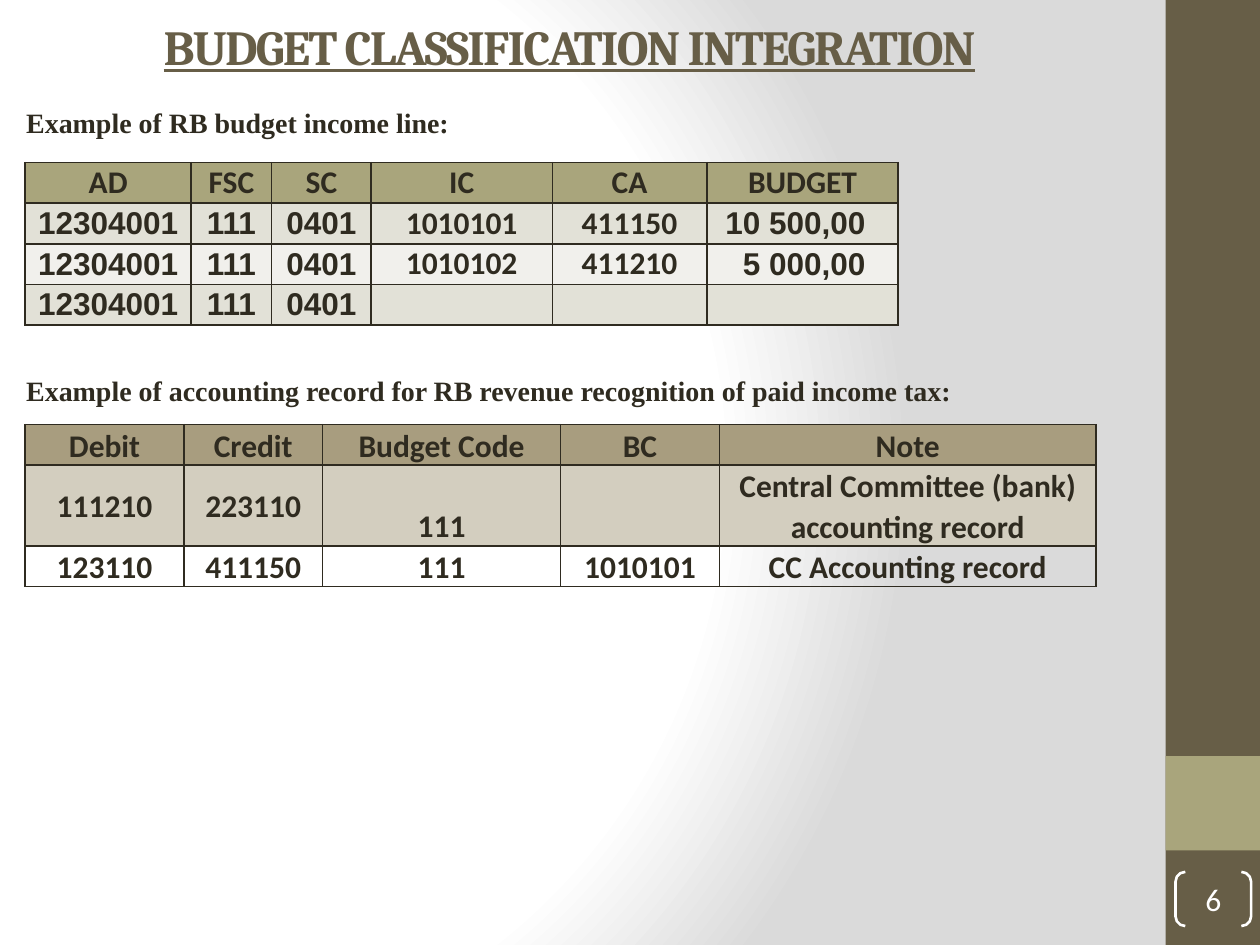
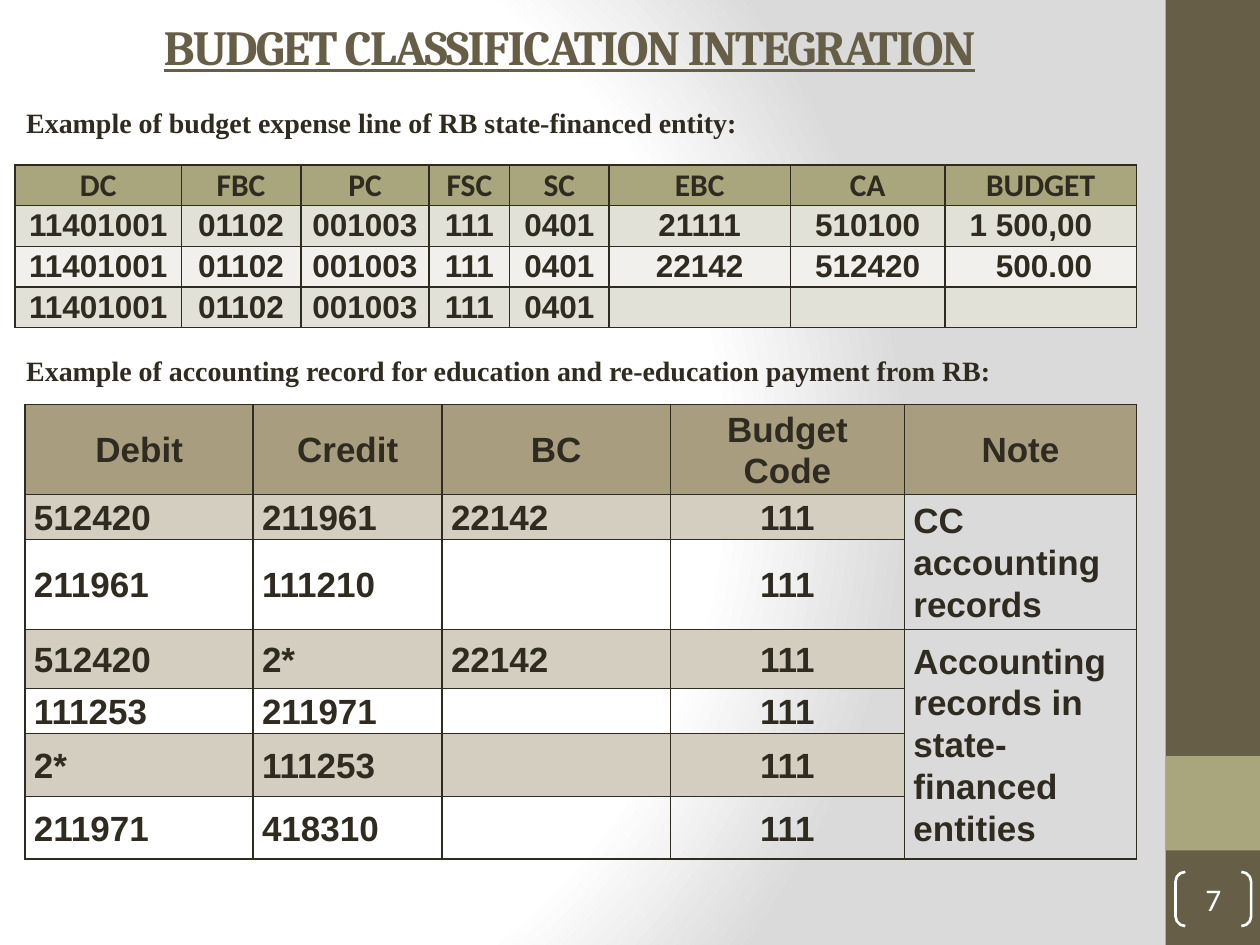
import dataclasses

import pptx
import pptx.dml.color
import pptx.enum.shapes
import pptx.enum.text
import pptx.oxml
import pptx.oxml.ns
import pptx.util

ALIGN = pptx.enum.text.PP_ALIGN
ANCHOR = pptx.enum.text.MSO_ANCHOR
SHAPE = pptx.enum.shapes.MSO_SHAPE
ALIGNS = {"l": ALIGN.LEFT, "c": ALIGN.CENTER, "r": ALIGN.RIGHT}
ANCHORS = {"t": ANCHOR.TOP, "m": ANCHOR.MIDDLE, "b": ANCHOR.BOTTOM}

INK, BROWN, OLIVE, WHITE, GREY = "2F2B20", "675E47", "A9A57C", "FFFFFF", "DADADA"
TITLE = "BUDGET CLASSIFICATION INTEGRATION"
SLIDE_W, SLIDE_H = pptx.util.Inches(10), pptx.util.Inches(7.5)
# Boxes are left, top, width, height in percent of the slide
TITLE_BOX = (2, 0.8, 86.4, 8.13)
SIDE_BAND = (92.5, 0, 7.5, 100)
ACCENT_BAND = (92.5, 80, 7.5, 10)
NUMBER_BOX = (93.3, 92.27, 6, 5.73)


@dataclasses.dataclass
class TableLook:
    header: str
    bands: tuple
    inset: float
    spacing: float


BUDGET = TableLook(OLIVE, ("E2E1D7", "F1F0EC"), 0.01, 1)
RECORD = TableLook("A89D7F", ("D3CEBF", None), 0.07, 1.07)


def rgb(color):
    return pptx.dml.color.RGBColor.from_string(color)


def place(box):
    left, top, width, height = (share / 100 for share in box)
    return (round(left * SLIDE_W), round(top * SLIDE_H),
            round(width * SLIDE_W), round(height * SLIDE_H))


def style_run(p, font, size, color=INK, bold=True):
    for r in p.runs:
        r.font.name, r.font.size, r.font.bold = font, pptx.util.Pt(size), bold
        r.font.color.rgb = rgb(color)


def set_background(master):
    """Radial fade from white to grey."""
    master.background.fill.gradient()
    old = master.element.find(".//" + pptx.oxml.ns.qn("a:gradFill"))
    stops = "".join(
        f'<a:gs pos="{pos}000"><a:srgbClr val="{color}"/></a:gs>'
        for pos, color in ((0, WHITE), (75, WHITE), (100, GREY)))
    new = pptx.oxml.parse_xml(
        f'<a:gradFill {pptx.oxml.ns.nsdecls("a")} rotWithShape="1">'
        f'<a:gsLst>{stops}</a:gsLst><a:path path="circle">'
        '<a:fillToRect l="20000" t="50000" r="100000" b="50000"/>'
        '</a:path></a:gradFill>')
    old.getparent().replace(old, new)


def add_master_bands(s, master):
    """Draw the side bands once and hand them over to the master."""
    for number, (box, color) in enumerate(
            ((SIDE_BAND, BROWN), (ACCENT_BAND, OLIVE)), start=20):
        sp = s.shapes.add_shape(SHAPE.RECTANGLE, *place(box))
        sp.shadow.inherit = False
        sp.fill.solid()
        sp.fill.fore_color.rgb = rgb(color)
        sp.line.fill.background()
        sp.element.nvSpPr.cNvPr.set("id", str(number))
        master.shapes.element.append(sp.element)


def add_title(s):
    sp = s.shapes.title
    sp.left, sp.top, sp.width, sp.height = place(TITLE_BOX)
    tf = sp.text_frame
    tf.text = TITLE
    tf.vertical_anchor = ANCHOR.MIDDLE
    p = tf.paragraphs[0]
    p.alignment = ALIGN.CENTER
    style_run(p, "Cambria", 28, BROWN)
    r = p.runs[0]
    r.font.underline = True
    r.font._element.set("spc", "-100")


def add_page_number(s, number):
    sp = s.shapes.add_shape(SHAPE.DOUBLE_BRACKET, *place(NUMBER_BOX))
    sp.adjustments[0] = 0.18
    sp.shadow.inherit = False
    sp.fill.background()
    sp.line.color.rgb = rgb(WHITE)
    sp.line.width = pptx.util.Pt(1.5)
    tf = sp.text_frame
    tf.margin_left = tf.margin_right = tf.margin_top = tf.margin_bottom = 0
    tf.vertical_anchor = ANCHOR.MIDDLE
    p = tf.paragraphs[0]
    p.text = str(number)
    p.alignment = ALIGN.CENTER
    style_run(p, "Calibri", 18, WHITE, bold=False)


def add_caption(s, text, box):
    tf = s.shapes.add_textbox(*place(box)).text_frame
    tf.word_wrap = True
    tf.vertical_anchor = ANCHOR.MIDDLE
    p = tf.paragraphs[0]
    p.text = text
    p.alignment = ALIGN.JUSTIFY
    style_run(p, "Times New Roman", 16)


def add_borders(cell):
    tc_pr = cell._tc.get_or_add_tcPr()
    for side in "LRTB":
        tc_pr.append(pptx.oxml.parse_xml(
            f'<a:ln{side} {pptx.oxml.ns.nsdecls("a")} w="12700"><a:solidFill>'
            f'<a:srgbClr val="{INK}"/></a:solidFill></a:ln{side}>'))


def fill_cell(cell, color):
    if color:
        cell.fill.solid()
        cell.fill.fore_color.rgb = rgb(color)
    else:
        cell.fill.background()


def add_grid_table(s, box, look, rows, cols, heights, aligns, fonts, anchors,
                   header_font="Calibri", size=18, amount_inset=0, merges=()):
    """Columns and rows share the box by weight; the first row is the header."""
    left, top, width, height = place(box)
    table = s.shapes.add_table(
        len(rows), len(cols), left, top, width, height).table
    table.first_row = table.horz_banding = False
    for column, weight in zip(table.columns, cols):
        column.width = round(width * weight / sum(cols))
    for row, weight in zip(table.rows, heights):
        row.height = round(height * weight / sum(heights))

    for i, row in enumerate(rows):
        for j, text in enumerate(row):
            cell = table.cell(i, j)
            align = aligns[j] if i else "c"
            cell.margin_left = cell.margin_right = pptx.util.Inches(look.inset)
            cell.margin_top = cell.margin_bottom = 0
            if align == "r":
                cell.margin_right = pptx.util.Inches(amount_inset)
            cell.vertical_anchor = ANCHORS[anchors[j]]
            add_borders(cell)
            fill_cell(cell, look.bands[(i - 1) % 2] if i else look.header)
            p = cell.text_frame.paragraphs[0]
            p.text = text
            p.alignment = ALIGNS[align]
            p.line_spacing = look.spacing
            style_run(p, fonts[j] if i else header_font, size)

    # Notes that cover several records in the last column
    for first, last in merges:
        for i in range(first, last + 1):
            fill_cell(table.cell(i, len(cols) - 1), None)
        table.cell(first, len(cols) - 1).merge(table.cell(last, len(cols) - 1))


def income_slide(s):
    add_caption(s, "Example of RB budget income line:", (1.1, 10.53, 63.9, 4.93))
    key = ["12304001", "111", "0401"]
    add_grid_table(
        s, (2, 17.2, 69.3, 17.2), BUDGET,
        [["AD", "FSC", "SC", "IC", "CA", "BUDGET"],
         key + ["1010101", "411150", "10 500,00"],
         key + ["1010102", "411210", "5 000,00"],
         key + [""] * 3],
        cols=[132, 64, 79, 144, 123, 152], heights=[1] * 4,
        aligns="cccccr", anchors="m" * 6, amount_inset=0.26,
        fonts=["Arial"] * 3 + ["Calibri"] * 2 + ["Arial"])

    add_caption(s, "Example of accounting record for RB revenue recognition"
                " of paid income tax:", (1.1, 38.8, 85.9, 4.93))
    add_grid_table(
        s, (2, 44.93, 85, 17.1), RECORD,
        [["Debit", "Credit", "Budget Code", "BC", "Note"],
         ["111210", "223110", "111", "",
          "Central Committee (bank) accounting record"],
         ["123110", "411150", "111", "1010101", "CC Accounting record"]],
        cols=[126, 110, 189, 126, 299], heights=[1, 2, 1],
        aligns="c" * 5, anchors="mmbtt", fonts=["Calibri"] * 5)


def expense_slide(s):
    add_caption(s, "Example of budget expense line of RB state-financed entity:",
                (1.1, 10.53, 63.9, 4.93))
    key = ["11401001", "01102", "001003", "111", "0401"]
    add_grid_table(
        s, (1.2, 17.47, 89, 17.2), BUDGET,
        [["DC", "FBC", "PC", "FSC", "SC", "EBC", "CA", "BUDGET"],
         key + ["21111", "510100", "1 500,00"],
         key + ["22142", "512420", "500.00"],
         key + [""] * 3],
        cols=[132, 95, 102, 64, 79, 144, 123, 152], heights=[1] * 4,
        aligns="cccccccr", anchors="m" * 8, amount_inset=0.35,
        fonts=["Arial"] * 8)

    add_caption(s, "Example of accounting record for education and re-education"
                " payment from RB:", (1.1, 36.67, 81.1, 4.93))
    add_grid_table(
        s, (2, 42.8, 88.2, 46.4), RECORD,
        [["Debit", "Credit", "BC", "Budget Code", "Note"],
         ["512420", "211961", "22142", "111", "CC accounting records"],
         ["211961", "111210", "", "111", ""],
         ["512420", "2*", "22142", "111",
          "Accounting records in state-financed entities"],
         ["111253", "211971", "", "111", ""],
         ["2*", "111253", "", "111", ""],
         ["211971", "418310", "", "111", ""]],
        cols=[181, 150, 181, 186, 184], heights=[67, 33, 66, 47, 36, 50, 50],
        aligns="lllcl", anchors="m" * 5, fonts=["Arial"] * 5,
        header_font="Arial", size=20, merges=((1, 2), (3, 6)))


def main():
    prs = pptx.Presentation()
    prs.slide_width, prs.slide_height = SLIDE_W, SLIDE_H
    set_background(prs.slide_master)
    for number, build in enumerate((income_slide, expense_slide), start=6):
        s = prs.slides.add_slide(prs.slide_layouts[5])
        if number == 6:
            add_master_bands(s, prs.slide_master)
        add_title(s)
        add_page_number(s, number)
        build(s)
    prs.save("out.pptx")


if __name__ == "__main__":
    main()
